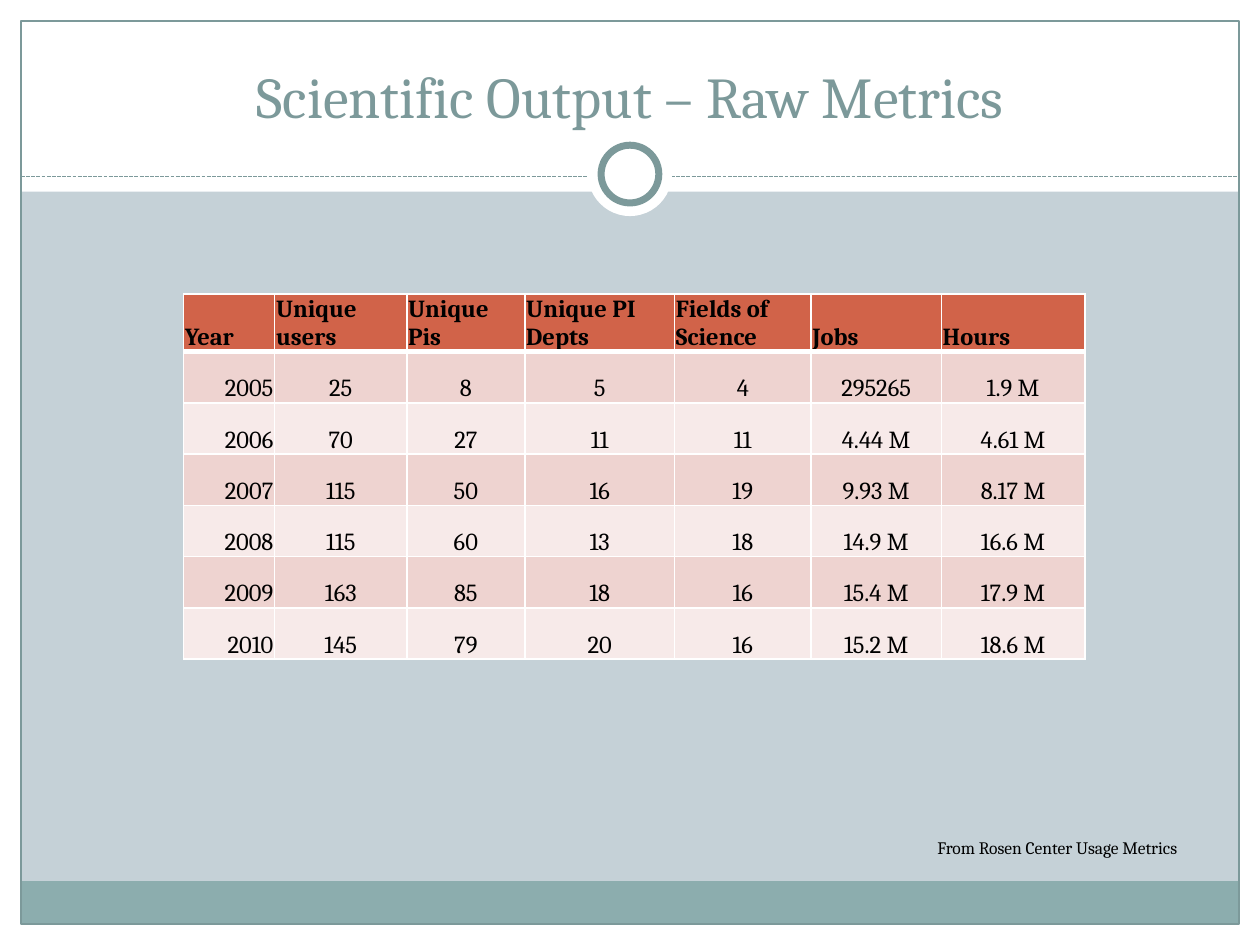
from lxml import etree
from pptx import Presentation, util as u
from pptx.dml.color import RGBColor
from pptx.enum import dml, shapes, text
from pptx.oxml import ns

Pt = u.Pt
FONT = "Cambria"
HUES = {
    "back": "C5D1D7", "white": "FFFFFF", "black": "000000", "teal": "7C999A",
    "bar": "8CADAE", "head": "D16349", "odd": "EED3D0", "even": "F7EAE9",
}
ALIGN = text.PP_ALIGN
KINDS = shapes.MSO_SHAPE
WIDTHS = [52, 75.5, 67.5, 85.5, 78, 74.5, 82]
ROWS = [
    ["Year", "Unique users", "Unique Pis", "Unique PI Depts",
     "Fields of Science", "Jobs", "Hours"],
    ["2005", "25", "8", "5", "4", "295265", "1.9 M"],
    ["2006", "70", "27", "11", "11", "4.44 M", "4.61 M"],
    ["2007", "115", "50", "16", "19", "9.93 M", "8.17 M"],
    ["2008", "115", "60", "13", "18", "14.9 M", "16.6 M"],
    ["2009", "163", "85", "18", "16", "15.4 M", "17.9 M"],
    ["2010", "145", "79", "20", "16", "15.2 M", "18.6 M"],
]


def hue(name):
    return RGBColor.from_string(HUES[name])


def paint(fill, name):
    fill.solid()
    fill.fore_color.rgb = hue(name)


def write(frame, words, size=14, color="black", bold=False, align=ALIGN.LEFT):
    """Put one formatted paragraph of text into a text frame."""
    para = frame.paragraphs[0]
    para.alignment = align
    run = para.add_run()
    run.text = words
    font = run.font
    font.name, font.size, font.bold = FONT, Pt(size), bold
    font.color.rgb = hue(color)


def shape(slide, kind, box, fill=None, line=None, width=0.75):
    item = slide.shapes.add_shape(kind, *map(Pt, box))
    item.shadow.inherit = False
    if fill:
        paint(item.fill, fill)
    else:
        item.fill.background()
    if line:
        item.line.color.rgb = hue(line)
        item.line.width = Pt(width)
    else:
        item.line.fill.background()


def rule(slide, left, right, top):
    item = slide.shapes.add_connector(
        shapes.MSO_CONNECTOR.STRAIGHT, Pt(left), Pt(top), Pt(right), Pt(top))
    item.line.color.rgb = hue("teal")
    item.line.width = Pt(0.75)
    item.line.dash_style = dml.MSO_LINE.SQUARE_DOT
    etree.SubElement(item._element.spPr, ns.qn("a:effectLst"))


def border(cell, side, width):
    props = cell._tc.get_or_add_tcPr()
    line = etree.SubElement(props, ns.qn("a:ln" + side), w=str(Pt(width)))
    fill = etree.SubElement(line, ns.qn("a:solidFill"))
    etree.SubElement(fill, ns.qn("a:srgbClr"), val=HUES["white"])


def style(cell, row, col):
    if row == 0:
        fill, align = "head", ALIGN.LEFT
    else:
        fill = "odd" if row % 2 else "even"
        align = ALIGN.CENTER if col else ALIGN.RIGHT
    thick = {(0, "B"), (1, "T")}
    for side in "LRTB":
        border(cell, side, 3 if (row, side) in thick else 1)
    paint(cell.fill, fill)
    cell.vertical_anchor = text.MSO_ANCHOR.BOTTOM
    cell.margin_left = cell.margin_right = cell.margin_top = Pt(0.75)
    cell.margin_bottom = 0
    write(cell.text_frame, ROWS[row][col], bold=row == 0, align=align)


def table(slide, left, top, head=32, body=29.3):
    high = head + body * (len(ROWS) - 1)
    grid = slide.shapes.add_table(
        len(ROWS), len(WIDTHS), Pt(left), Pt(top),
        Pt(sum(WIDTHS)), Pt(high)).table
    for col, width in zip(grid.columns, WIDTHS):
        col.width = Pt(width)
    for row, line in enumerate(grid.rows):
        line.height = Pt(body if row else head)
        for col, cell in enumerate(line.cells):
            style(cell, row, col)


def title(slide, words, box):
    item = slide.shapes.title
    item.left, item.top, item.width, item.height = map(Pt, box)
    frame = item.text_frame
    frame.auto_size = text.MSO_AUTO_SIZE.NONE
    frame.vertical_anchor = text.MSO_ANCHOR.BOTTOM
    write(frame, words, size=33, color="teal", align=ALIGN.CENTER)
    slide.shapes._spTree.append(item._element)


def note(slide, words, box):
    frame = slide.shapes.add_textbox(*map(Pt, box)).text_frame
    frame.word_wrap = False
    frame.auto_size = text.MSO_AUTO_SIZE.SHAPE_TO_FIT_TEXT
    write(frame, words, size=10)


def decor(slide):
    edges = [(0, 528, 720, 12), (0, 0, 720, 109.5),
             (0, 0, 12, 540), (708, 0, 12, 540)]
    for box in edges:
        shape(slide, KINDS.RECTANGLE, box, "white")
    shape(slide, KINDS.RECTANGLE, (12, 503.5, 696, 24.5), "bar")
    shape(slide, KINDS.RECTANGLE, (12, 12, 696, 516), line="teal")
    rule(slide, 12, 708, 100.8)
    shape(slide, KINDS.OVAL, (336, 75.5, 48, 48), "white")
    shape(slide, KINDS.OVAL, (343.5, 83, 33, 33), "white", "teal", 4)


def main():
    deck = Presentation()
    deck.slide_width, deck.slide_height = Pt(720), Pt(540)
    slide = deck.slides.add_slide(deck.slide_layouts[5])
    paint(slide.background.fill, "back")
    decor(slide)
    title(slide, "Scientific Output – Raw Metrics", (24, 18, 672, 60))
    table(slide, 105, 168)
    note(slide, "From Rosen Center Usage Metrics", (528.5, 474.5, 167, 19.5))
    deck.save("out.pptx")


if __name__ == "__main__":
    main()
